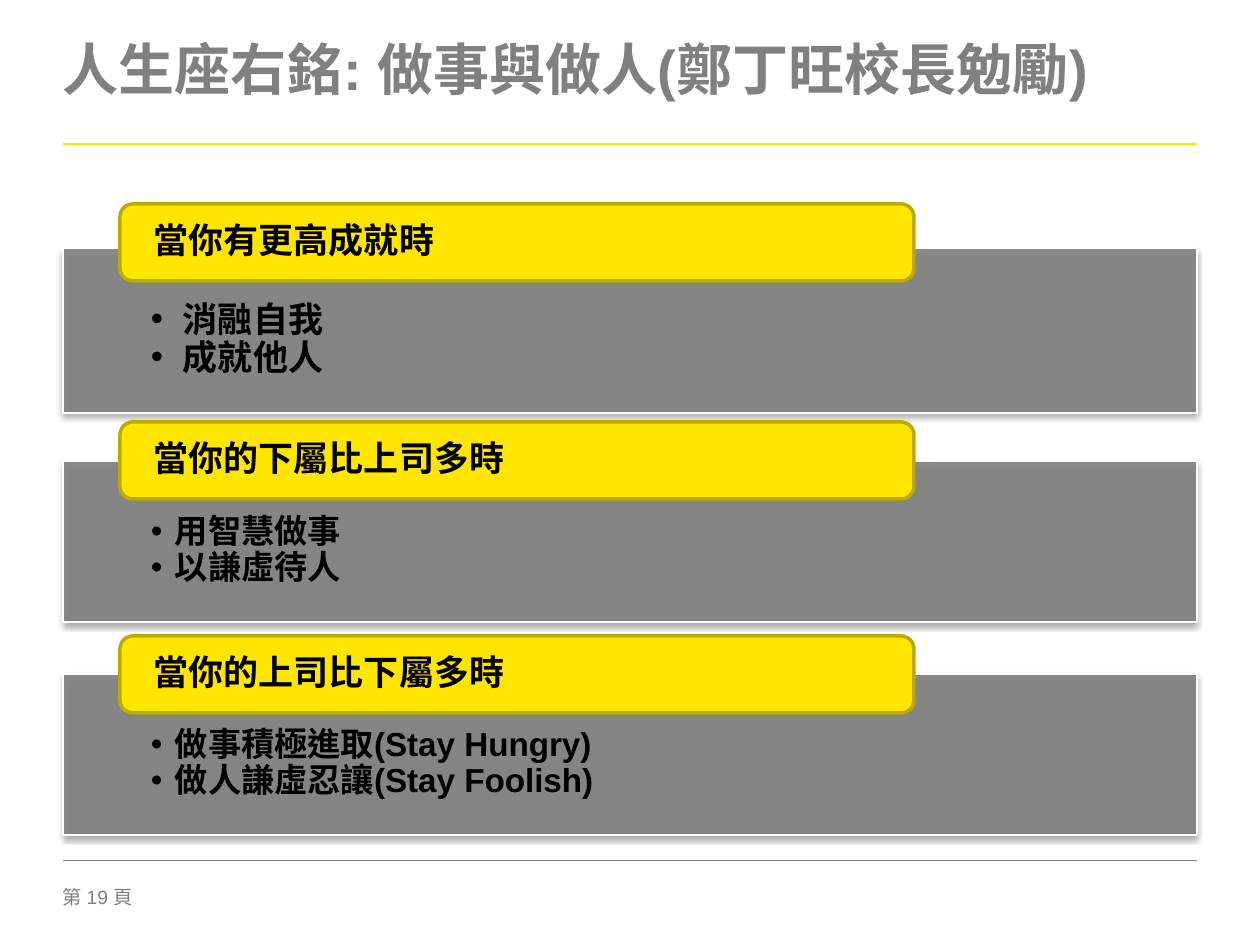
import pptx
import pptx.util
import pptx.dml.color
import pptx.enum.lang
import pptx.enum.shapes
import pptx.enum.text
import pptx.oxml.ns
from lxml import etree

RGB = pptx.dml.color.RGBColor
GRAY = RGB(0x80, 0x80, 0x80)
YELLOW = RGB(0xFF, 0xE6, 0x00)
OLIVE = RGB(0xBD, 0xAA, 0x00)
WHITE = RGB(0xFF, 0xFF, 0xFF)
BLACK = RGB(0x00, 0x00, 0x00)

SCALE = 914400 // 126
LEFT, WIDE = 63, 1134

# heading, tab top, band top, band height, text size, indent, points
BANDS = [
    ("當你有更高成就時", 204, 248, 165, 20, 32, ["消融自我", "成就他人"]),
    ("當你的下屬比上司多時", 422, 461, 161, 19, 24, ["用智慧做事", "以謙虛待人"]),
    ("當你的上司比下屬多時", 636, 674, 161, 19, 24,
     ["做事積極進取(Stay Hungry)", "做人謙虛忍讓(Stay Foolish)"]),
]


def px(n):
    return pptx.util.Emu(n * SCALE)


def sub(node, tag, **attrs):
    return etree.SubElement(node, pptx.oxml.ns.qn(tag), attrs)


class Deck:
    latin = "Arial"
    asian = "Noto Sans CJK SC"

    def __init__(self):
        self.prs = pptx.Presentation()
        self.prs.slide_width = px(1260)
        self.prs.slide_height = px(945)
        self.slide = self.prs.slides.add_slide(self.prs.slide_layouts[6])

    def fill(self, frame, lines, size, color, bold=True, space=0.9,
             inset=(0, 0, 0, 0), middle=False, indent=0):
        """Put lines in a frame; an indent turns them into bullets."""
        frame.word_wrap = True
        (frame.margin_left, frame.margin_top,
         frame.margin_right, frame.margin_bottom) = map(px, inset)
        anchor = pptx.enum.text.MSO_ANCHOR
        frame.vertical_anchor = anchor.MIDDLE if middle else anchor.TOP
        frame.text = "\n".join(lines)
        for para in frame.paragraphs:
            para.alignment = pptx.enum.text.PP_ALIGN.LEFT
            para.line_spacing = space
            if indent:
                para.level = 1
                props = para._p.get_or_add_pPr()
                props.set("marL", str(px(indent)))
                props.set("indent", str(-px(indent)))
                sub(props, "a:buFont", typeface=self.latin)
                sub(props, "a:buChar", char="•")
            for run in para.runs:
                font = run.font
                font.size = pptx.util.Pt(size)
                font.bold = bold
                font.color.rgb = color
                font.name = self.latin
                font.language_id = pptx.enum.lang.MSO_LANGUAGE_ID.TRADITIONAL_CHINESE
                sub(run._r.get_or_add_rPr(), "a:ea", typeface=self.asian)

    def text(self, x, y, w, h, words, size, color, **style):
        box = self.slide.shapes.add_textbox(px(x), px(y), px(w), px(h))
        self.fill(box.text_frame, [words], size, color, **style)

    def rule(self, y, color, width):
        line = self.slide.shapes.add_connector(
            pptx.enum.shapes.MSO_CONNECTOR.STRAIGHT,
            px(LEFT), px(y), px(LEFT + WIDE), px(y))
        line.line.color.rgb = color
        line.line.width = pptx.util.Pt(width)
        sub(line._element.spPr, "a:effectLst")

    def shape(self, kind, x, y, w, h, fill, edge, width):
        item = self.slide.shapes.add_shape(kind, px(x), px(y), px(w), px(h))
        item.shadow.inherit = False
        item.fill.solid()
        item.fill.fore_color.rgb = fill
        item.line.color.rgb = edge
        item.line.width = pptx.util.Pt(width)
        return item

    def band(self, y, h, points, size, indent):
        """Add a see-through panel with a soft shadow and bullets."""
        item = self.shape(pptx.enum.shapes.MSO_SHAPE.RECTANGLE,
                          LEFT, y, WIDE, h, GRAY, WHITE, 0.75)
        props = item._element.spPr
        paint = props.find(pptx.oxml.ns.qn("a:solidFill"))
        sub(paint[0], "a:alpha", val="90000")
        shade = sub(props.find(pptx.oxml.ns.qn("a:effectLst")), "a:outerShdw",
                    blurRad=str(pptx.util.Pt(3.1)), dist=str(pptx.util.Pt(1.8)),
                    dir="5400000", rotWithShape="0")
        sub(sub(shade, "a:srgbClr", val=str(BLACK)), "a:alpha", val="35000")
        self.fill(item.text_frame, points, size, BLACK,
                  inset=(88, 54, 88, 20), indent=indent)

    def tab(self, y, words):
        item = self.shape(pptx.enum.shapes.MSO_SHAPE.ROUNDED_RECTANGLE,
                          120, y, 794, 77, YELLOW, OLIVE, 2)
        self.fill(item.text_frame, [words], 20, BLACK,
                  inset=(30, 0, 30, 0), middle=True)


def main():
    deck = Deck()
    deck.text(LEFT, 885, 100, 28, "第 19 頁", 11, GRAY, bold=False, space=1.0)
    deck.rule(144, YELLOW, 1.5)
    deck.rule(860, GRAY, 0.25)
    deck.text(LEFT, 45, WIDE, 101, "人生座右銘: 做事與做人(鄭丁旺校長勉勵)",
              32, GRAY, space=0.85)
    for head, top, y, h, size, indent, points in BANDS:
        deck.band(y, h, points, size, indent)
        deck.tab(top, head)
    deck.prs.save("out.pptx")


if __name__ == "__main__":
    main()
